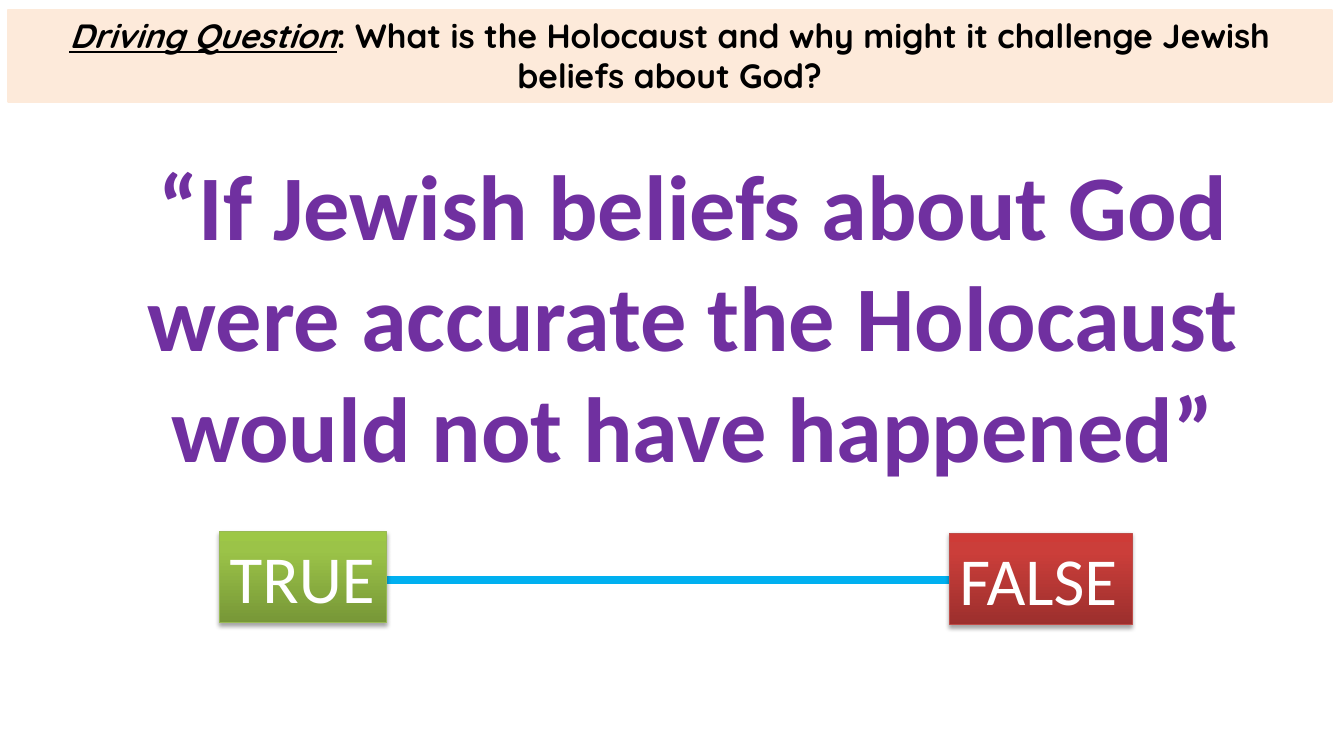
from dataclasses import dataclass
from typing import NamedTuple

from lxml import etree
from pptx import Presentation
from pptx.dml.color import RGBColor
from pptx.enum.shapes import MSO_CONNECTOR, MSO_SHAPE
from pptx.enum.text import MSO_ANCHOR, MSO_AUTO_SIZE, PP_ALIGN
from pptx.oxml.ns import qn
from pptx.util import Cm, Pt

RECTANGLE = MSO_SHAPE.RECTANGLE
STRAIGHT = MSO_CONNECTOR.STRAIGHT
TOP = MSO_ANCHOR.TOP
NO_FIT = MSO_AUTO_SIZE.NONE
LEFT, CENTER = PP_ALIGN.LEFT, PP_ALIGN.CENTER
TITLE_ONLY = 5


class Box(NamedTuple):
    """Left, top, width and height of a region in centimetres."""
    left: float
    top: float
    width: float
    height: float


class Button(NamedTuple):
    """Outline colour and gradient stops of an answer box."""
    outline: str
    stops: tuple


@dataclass(frozen=True)
class Theme:
    """Colours, fonts and type sizes of the slide."""
    banner: str = "FDEADA"
    ink: str = "000000"
    quote: str = "7030A0"
    scale: str = "00B0F0"
    label: str = "FFFFFF"
    shadow: str = "000000"
    true: Button = Button("98B955", ((0, "779737"), (80, "9BC348"), (100, "9DC746")))
    false: Button = Button("BF4C48", ((0, "9C2F2D"), (80, "CB3E3A"), (100, "CE3B37")))
    heading_font: str = "Quicksand"
    body_font: str = "Calibri"
    heading_size: int = 24
    label_size: int = 48
    quote_size: int = 66


THEME = Theme()


def place(shape, box):
    """Move a shape to a box."""
    shape.left, shape.top, shape.width, shape.height = map(Cm, box)


def start_text(shape, align, wrap=True):
    """Prepare a text frame and return its first paragraph."""
    frame = shape.text_frame
    frame.word_wrap = wrap
    frame.auto_size = NO_FIT
    frame.vertical_anchor = TOP
    para = frame.paragraphs[0]
    para.alignment = align
    return para


def add_span(para, text, font, size, color, bold=False, accent=False):
    """Add one run, in underlined italics when accented."""
    span = para.add_run()
    span.text = text
    span.font.name = font
    span.font.size = Pt(size)
    span.font.color.rgb = RGBColor.from_string(color)
    span.font.bold = bold
    span.font.italic = accent
    span.font.underline = accent


def add_color(parent, color):
    """Append an RGB colour element and return it."""
    return etree.SubElement(parent, qn("a:srgbClr"), val=color)


def fill_gradient(shape, stops):
    """Fill a shape with a gradient running from bottom to top."""
    shape.fill.gradient()
    shape.fill.gradient_angle = 90
    stop_list = shape.element.spPr.find(".//" + qn("a:gsLst"))
    for old_stop in list(stop_list):
        stop_list.remove(old_stop)
    for percent, color in stops:
        add_color(etree.SubElement(stop_list, qn("a:gs"), pos=str(percent * 1000)), color)


def drop_shadow(shape):
    """Give a shape a soft shadow below it."""
    shape.shadow.inherit = False
    effects = shape.element.spPr.find(qn("a:effectLst"))
    shadow = etree.SubElement(effects, qn("a:outerShdw"), blurRad=str(Pt(3.1)),
                              dist=str(Pt(1.8)), dir="5400000", rotWithShape="0")
    etree.SubElement(add_color(shadow, THEME.shadow), qn("a:alpha"), val="35000")


def add_banner(page, box):
    """Set the driving question in the title placeholder."""
    banner = page.shapes.title
    place(banner, box)
    banner.fill.solid()
    banner.fill.fore_color.rgb = RGBColor.from_string(THEME.banner)
    banner.line.color.rgb = RGBColor.from_string(THEME.banner)
    banner.line.width = Pt(2)
    para = start_text(banner, CENTER)
    style = (THEME.heading_font, THEME.heading_size, THEME.ink, True)
    add_span(para, "Driving Question", *style, accent=True)
    add_span(para, ": What is the Holocaust and why might it challenge Jewish "
                   "beliefs about God?", *style)


def add_quote(page, box):
    """Add the statement to be judged."""
    quote = page.shapes.add_textbox(*map(Cm, box))
    add_span(start_text(quote, CENTER),
             "“If Jewish beliefs about God were accurate the Holocaust "
             "would not have happened”",
             THEME.body_font, THEME.quote_size, THEME.quote, True)


def add_answer(page, box, text, button):
    """Add one end of the scale."""
    answer = page.shapes.add_shape(RECTANGLE, *map(Cm, box))
    fill_gradient(answer, button.stops)
    answer.line.color.rgb = RGBColor.from_string(button.outline)
    answer.line.width = Pt(0.75)
    drop_shadow(answer)
    add_span(start_text(answer, LEFT, wrap=False), text,
             THEME.body_font, THEME.label_size, THEME.label)


def add_scale(page, box):
    """Add the line of opinion between its two answers."""
    right = box.left + box.width
    height = box.top + 1.22
    line = page.shapes.add_connector(STRAIGHT, Cm(box.left + 2.38), Cm(height),
                                     Cm(right - 2.8), Cm(height))
    line.line.color.rgb = RGBColor.from_string(THEME.scale)
    line.line.width = Pt(6)
    etree.SubElement(line.element.spPr, qn("a:effectLst"))
    true_width, false_width, drop = 4.2, 4.6, 0.05
    answer_height = box.height - drop
    add_answer(page, Box(box.left, box.top, true_width, answer_height),
               "TRUE", THEME.true)
    add_answer(page, Box(right - false_width, box.top + drop, false_width, answer_height),
               "FALSE", THEME.false)


def main():
    """Build and save the deck."""
    deck = Presentation()
    deck.slide_width, deck.slide_height = Cm(33.87), Cm(19.05)
    page = deck.slides.add_slide(deck.slide_layouts[TITLE_ONLY])
    add_banner(page, Box(0.2, 0.25, 33.35, 2.31))
    add_quote(page, Box(1.78, 3.61, 31.37, 8.71))
    add_scale(page, Box(5.54, 13.39, 22.99, 2.36))
    deck.save("out.pptx")


if __name__ == "__main__":
    main()
